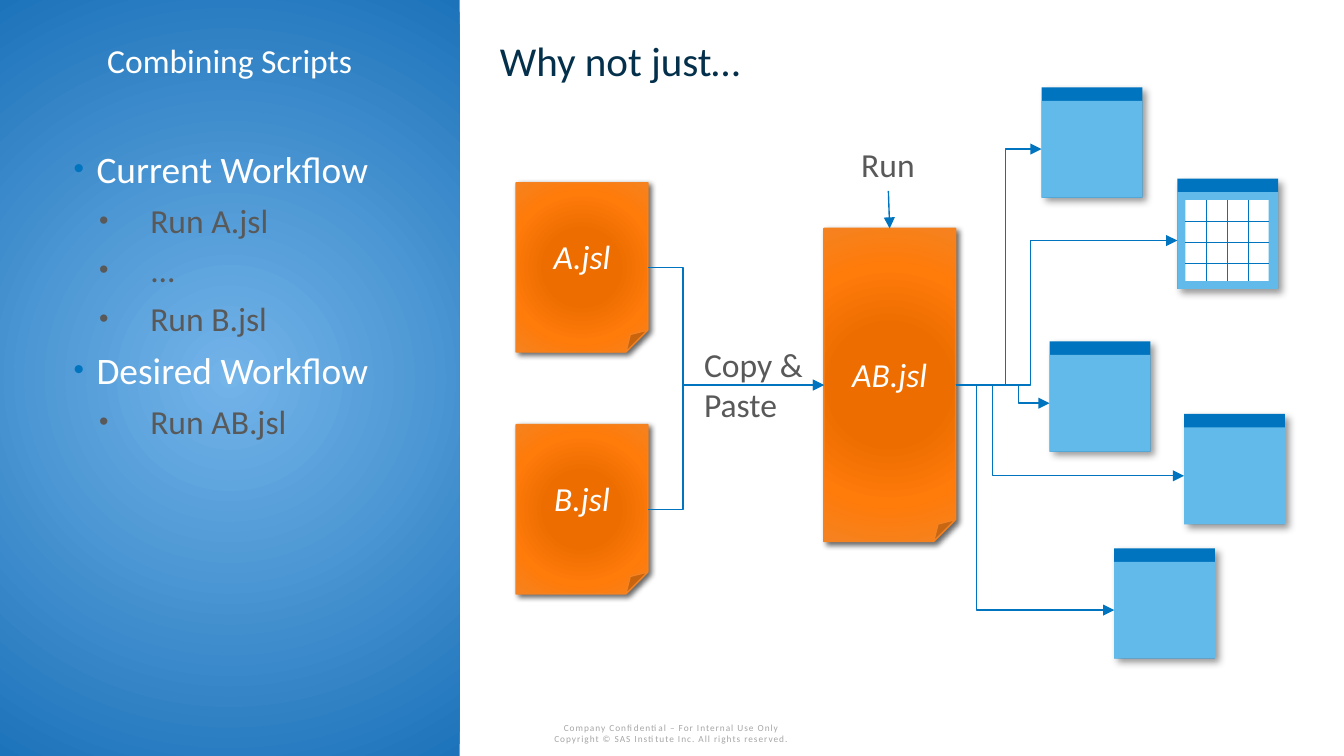
import pptx
import pptx.dml.color
import pptx.enum.dml
import pptx.enum.shapes
import pptx.enum.text
import pptx.oxml
import pptx.oxml.ns
import pptx.util

Inches = pptx.util.Inches
Pt = pptx.util.Pt
SHAPES = pptx.enum.shapes.MSO_SHAPE
CONNECTORS = pptx.enum.shapes.MSO_CONNECTOR
ALIGN = pptx.enum.text.PP_ALIGN
ANCHOR = pptx.enum.text.MSO_ANCHOR

SLIDE_WIDTH = 10
SLIDE_HEIGHT = SLIDE_WIDTH * 9 / 16
COLOURS = {
    "white": "FFFFFF", "navy": "04304B", "blue": "0074BE", "sky": "61BAE9",
    "grey": "595959", "pale": "A6A6A6", "orange": "F58220",
}
PANEL_STOPS = [(0, "73B4E9"), (100, "1D73BA")]
SCRIPT_STOPS = [(0, "ED6D00"), (34, "ED6D00"), (70, "FF7B0A"), (100, "F58220")]
TOP, LEFT, RIGHT = 0, 1, 3

WORKFLOWS = [
    (0, "Current Workflow"), (1, "Run A.jsl"), (1, "..."), (1, "Run B.jsl"),
    (0, "Desired Workflow"), (1, "Run AB.jsl"),
]
# left, top, percent of the way at which the connector bends, holds a table
WINDOWS = [
    (7.75, 0.65, 58.3, False),
    (8.76, 1.33, 33.9, True),
    (7.81, 2.54, 67, False),
    (8.81, 3.08, 16.2, False),
    (8.29, 4.08, 13.1, False),
]


def colour(name):
    return pptx.dml.color.RGBColor.from_string(COLOURS[name])


def element(xml):
    """Parse XML whose root is in the drawing namespace."""
    head, mark, rest = xml.partition(">")
    if head.endswith("/"):
        head, mark = head[:-1], "/>"
    return pptx.oxml.parse_xml(
        f"{head} {pptx.oxml.ns.nsdecls('a')}{mark}{rest}")


def style_font(font, size, colour_name, italic=None):
    settings = {"name": "Calibri", "size": Pt(size), "italic": italic}
    for name, value in settings.items():
        setattr(font, name, value)
    font.color.rgb = colour(colour_name)


def write(frame, text, size, colour_name, align=ALIGN.LEFT, italic=None):
    frame.text = text
    for para in frame.paragraphs:
        para.alignment = align
        for span in para.runs:
            style_font(span.font, size, colour_name, italic)


def add_text(page, place, text, size, colour_name, wrap=True,
             anchor=ANCHOR.TOP, align=ALIGN.LEFT):
    box = page.shapes.add_textbox(*map(Inches, place))
    box.text_frame.word_wrap = wrap
    box.text_frame.vertical_anchor = anchor
    write(box.text_frame, text, size, colour_name, align)
    return box


def add_plain(shapes, kind, place, fill=None):
    shape = shapes.add_shape(kind, *map(Inches, place))
    shape.shadow.inherit = False
    shape.line.fill.background()
    if fill:
        shape.fill.solid()
        shape.fill.fore_color.rgb = colour(fill)
    return shape


def set_radial(shape, stops, edge):
    """Fill from the middle outwards; edge is the inset of the focus in percent."""
    marks = "".join(
        f'<a:gs pos="{spot * 1000}"><a:srgbClr val="{tint}"/></a:gs>'
        for spot, tint in stops)
    sides = " ".join(f'{side}="{edge * 1000}"' for side in "ltrb")
    gradient = element(
        f'<a:gradFill rotWithShape="1"><a:gsLst>{marks}</a:gsLst>'
        f'<a:path path="circle"><a:fillToRect {sides}/></a:path></a:gradFill>')
    shape._element.spPr.find(pptx.oxml.ns.qn("a:prstGeom")).addnext(gradient)


def set_shadow(shape, alpha, blur, distance):
    effects = shape._element.spPr.find(pptx.oxml.ns.qn("a:effectLst"))
    effects.append(element(
        f'<a:outerShdw blurRad="{Pt(blur)}" dist="{Pt(distance)}" dir="2700000" '
        f'algn="tl" rotWithShape="0"><a:srgbClr val="000000">'
        f'<a:alpha val="{alpha * 1000}"/></a:srgbClr></a:outerShdw>'))


def add_script(page, place, name):
    sheet = add_plain(page.shapes, SHAPES.FOLDED_CORNER, place)
    set_radial(sheet, SCRIPT_STOPS, 100)
    sheet.line.color.rgb = colour("orange")
    sheet.line.width = Pt(0.75)
    set_shadow(sheet, 60, 3, 2)
    sheet.text_frame.vertical_anchor = ANCHOR.MIDDLE
    write(sheet.text_frame, name, 18, "white", ALIGN.CENTER, True)
    return sheet


def add_window(page, left, top, has_table):
    """Draw a window and return its body, where arrows end."""
    group = page.shapes.add_group_shape()
    frame = add_plain(group.shapes, SHAPES.RECTANGLE,
                      (left, top, 0.75, 0.82), "blue")
    set_shadow(frame, 40, 4, 3)
    body = add_plain(group.shapes, SHAPES.RECTANGLE,
                     (left, top + 0.1, 0.75, 0.72), "sky")
    if has_table:
        grid = add_plain(group.shapes, SHAPES.RECTANGLE,
                         (left + 0.06, top + 0.16, 0.62, 0.6))
        grid.fill.patterned()
        grid.fill.pattern = pptx.enum.dml.MSO_PATTERN.DOTTED_GRID
        grid.fill.fore_color.rgb = colour("blue")
        grid.fill.back_color.rgb = colour("white")
    return body


def style_arrow(arrow):
    arrow.line.color.rgb = colour("blue")
    arrow.line.width = Pt(0.75)
    arrow.line._get_or_add_ln().append(element('<a:tailEnd type="triangle"/>'))
    arrow._element.spPr.append(element("<a:effectLst/>"))


def add_bent_arrow(page, source, target, bend):
    arrow = page.shapes.add_connector(CONNECTORS.ELBOW, 0, 0, 0, 0)
    arrow.begin_connect(source, RIGHT)
    arrow.end_connect(target, LEFT)
    style_arrow(arrow)
    values = arrow._element.spPr.find(".//" + pptx.oxml.ns.qn("a:avLst"))
    values.append(element(
        f'<a:gd name="adj1" fmla="val {round(bend * 1000)}"/>'))


def add_workflows(page):
    text = "\n".join(line for level, line in WORKFLOWS)
    box = add_text(page, (0.45, 1.09, 2.67, 2.27), text, 18, "grey")
    for index, (level, line) in enumerate(WORKFLOWS):
        para = box.text_frame.paragraphs[index]
        settings = {"level": level, "line_spacing": 0.85,
                    "space_before": Pt(8 if index else 0)}
        for name, value in settings.items():
            setattr(para, name, value)
        margin, hang, tint = (0.57, 0.38, "grey") if level else (0.17, 0.17, "blue")
        properties = para._p.get_or_add_pPr()
        properties.set("marL", str(Inches(margin)))
        properties.set("indent", str(-Inches(hang)))
        for xml in (f'<a:buClr><a:srgbClr val="{COLOURS[tint]}"/></a:buClr>',
                    '<a:buSzPct val="80000"/>', '<a:buFont typeface="Arial"/>',
                    '<a:buChar char="•"/>'):
            properties.append(element(xml))
        if level == 0:
            style_font(para.runs[0].font, 20, "white")


def add_headings(page):
    title = page.shapes.title
    page.shapes._spTree.append(title._element)  # bring in front of the panel
    place = {"left": 0, "top": 0.25, "width": 3.42, "height": 0.4}
    for name, value in place.items():
        setattr(title, name, Inches(value))
    title.text_frame.auto_size = pptx.enum.text.MSO_AUTO_SIZE.NONE
    title.text_frame.vertical_anchor = ANCHOR.TOP
    write(title.text_frame, "Combining Scripts", 18, "white", ALIGN.CENTER)
    heading = add_text(page, (3.42, 0.21, 6.58, 0.47), "Why not just…", 22,
                       "navy", anchor=ANCHOR.MIDDLE)
    heading.text_frame.margin_left = heading.text_frame.margin_right = Inches(0.3)


def add_footer(page):
    footer = add_text(
        page, (3.62, 5.32, 2.75, 0.27),
        "Company Confidential – For Internal Use Only\n"
        "Copyright © SAS Institute Inc. All rights reserved.",
        5, "pale", anchor=ANCHOR.BOTTOM, align=ALIGN.CENTER)
    for para in footer.text_frame.paragraphs:
        para.runs[0].font._element.set("spc", "50")


def main():
    deck = pptx.Presentation()
    deck.slide_width, deck.slide_height = Inches(SLIDE_WIDTH), Inches(SLIDE_HEIGHT)
    page = deck.slides.add_slide(deck.slide_layouts[5])

    add_footer(page)
    panel = add_plain(page.shapes, SHAPES.RECTANGLE, (0, 0, 3.42, SLIDE_HEIGHT))
    set_radial(panel, PANEL_STOPS, 50)
    add_headings(page)
    add_workflows(page)

    parts = [add_script(page, (3.84, top, 0.98, 1.26), name)
             for top, name in ((1.36, "A.jsl"), (3.16, "B.jsl"))]
    combined = add_script(page, (6.13, 1.7, 0.98, 2.33), "AB.jsl")
    for part in parts:
        add_bent_arrow(page, part, combined, 20.1)

    add_text(page, (5.14, 2.51, 0.94, 0.71), "Copy &\vPaste", 18, "grey", wrap=False)
    add_text(page, (6.31, 1.02, 0.6, 0.4), "Run", 18, "grey", wrap=False)
    run_arrow = page.shapes.add_connector(
        CONNECTORS.STRAIGHT, *map(Inches, (6.61, 1.42, 6.62, 1.7)))
    run_arrow.end_connect(combined, TOP)
    style_arrow(run_arrow)

    for left, top, bend, has_table in WINDOWS:
        window = add_window(page, left, top, has_table)
        add_bent_arrow(page, combined, window, bend)

    deck.save("out.pptx")


if __name__ == "__main__":
    main()
